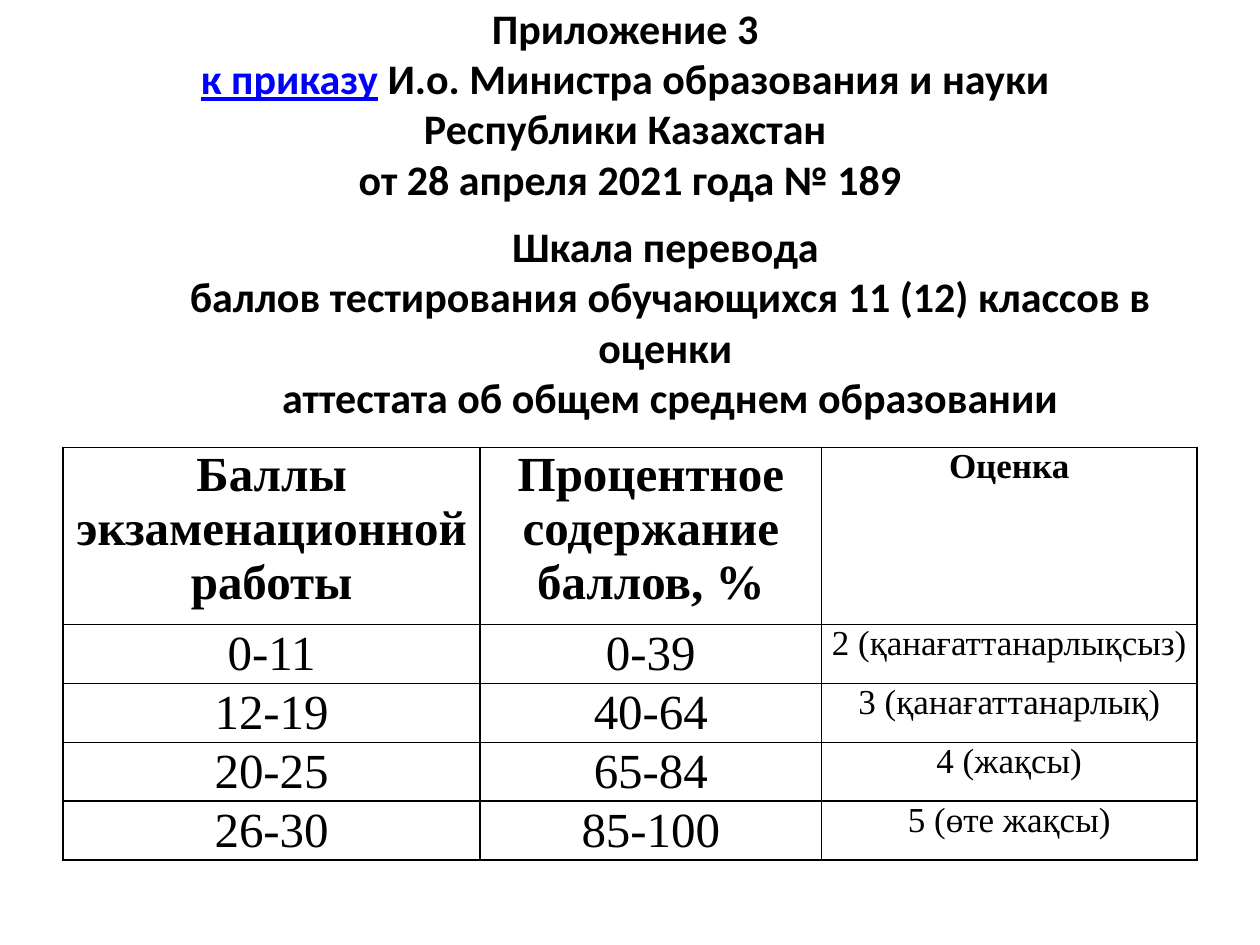
from dataclasses import dataclass

from lxml import etree
from pptx import Presentation
from pptx.dml.color import RGBColor
from pptx.enum.text import MSO_ANCHOR, PP_ALIGN
from pptx.oxml.ns import qn
from pptx.util import Cm, Pt

CENTER = PP_ALIGN.CENTER
TOP, MIDDLE = MSO_ANCHOR.TOP, MSO_ANCHOR.MIDDLE


@dataclass(frozen=True)
class Theme:
    ink: str = "000000"
    link: str = "0000FF"
    paper: str = "FFFFFF"
    head_font: str = "Calibri"
    table_font: str = "Times New Roman"
    head_size: int = 24
    score_size: int = 28
    grade_size: int = 20
    border: int = 1


THEME = Theme()

HEADERS = [
    ["Баллы экзаменационной ", "работы"],
    ["Процентное содержание баллов, %"],
    ["Оценка"],
]
GRADES = [
    ("0-11", "0-39", "2 (қанағаттанарлықсыз)"),
    ("12-19", "40-64", "3 (қанағаттанарлық)"),
    ("20-25", "65-84", "4 (жақсы)"),
    ("26-30", "85-100", "5 (өте жақсы)"),
]
COL_WIDTHS = [Cm(8.41), Cm(6.88), Cm(7.57)]
HEADER_HEIGHT, ROW_HEIGHT = Cm(3.57), Cm(1.18)


def add_run(p, text, font=THEME.head_font, size=THEME.head_size,
            color=THEME.ink, bold=True, underline=False):
    """Add text to a paragraph; each newline becomes a line break."""
    for i, line in enumerate(text.split("\n")):
        if i:
            p.add_line_break()
        if line:
            r = p.add_run()
            r.text = line
            r.font.name = font
            r.font.size = Pt(size)
            r.font.bold = bold
            r.font.underline = underline
            r.font.color.rgb = RGBColor.from_string(color)


def add_paragraphs(tf, lines, **fmt):
    for i, line in enumerate(lines):
        p = tf.add_paragraph() if i else tf.paragraphs[0]
        p.alignment = CENTER
        add_run(p, line, **fmt)


def add_textbox(s, left, top, width, height, anchor=TOP):
    tf = s.shapes.add_textbox(left, top, width, height).text_frame
    tf.word_wrap = True
    tf.vertical_anchor = anchor
    return tf


def set_borders(cell):
    tcPr = cell._tc.get_or_add_tcPr()
    for i, side in enumerate(("a:lnL", "a:lnR", "a:lnT", "a:lnB")):
        ln = etree.Element(qn(side), w=str(Pt(THEME.border)))
        fill = etree.SubElement(ln, qn("a:solidFill"))
        etree.SubElement(fill, qn("a:srgbClr"), val=THEME.ink)
        tcPr.insert(i, ln)


def fill_cell(cell, lines, size, bold=False, anchor=TOP):
    cell.margin_left = cell.margin_right = Cm(0.18)
    cell.margin_top = cell.margin_bottom = 0
    cell.vertical_anchor = anchor
    cell.fill.solid()
    cell.fill.fore_color.rgb = RGBColor.from_string(THEME.paper)
    set_borders(cell)
    add_paragraphs(cell.text_frame, lines, font=THEME.table_font,
                   size=size, bold=bold)


def add_grade_table(s, left, top):
    rows = len(GRADES) + 1
    height = HEADER_HEIGHT + ROW_HEIGHT * len(GRADES)
    table = s.shapes.add_table(rows, len(HEADERS), left, top,
                               sum(COL_WIDTHS), height).table
    for col, width in zip(table.columns, COL_WIDTHS):
        col.width = width
    for i, row in enumerate(table.rows):
        row.height = ROW_HEIGHT if i else HEADER_HEIGHT

    sizes = [THEME.score_size, THEME.score_size, THEME.grade_size]
    anchors = [MIDDLE, MIDDLE, TOP]
    for j, (size, anchor) in enumerate(zip(sizes, anchors)):
        fill_cell(table.cell(0, j), HEADERS[j], size, bold=True)
        for i, grade in enumerate(GRADES, start=1):
            fill_cell(table.cell(i, j), [grade[j]], size, anchor=anchor)


def main():
    prs = Presentation()
    prs.slide_width, prs.slide_height = Cm(25.4), Cm(19.05)
    s = prs.slides.add_slide(prs.slide_layouts[6])

    # Reference to the order
    tf = add_textbox(s, Cm(1.27), Cm(0.94), Cm(22.86), Cm(3.18), MIDDLE)
    tf.margin_bottom = Cm(1.04)
    p = tf.paragraphs[0]
    p.alignment = CENTER
    add_run(p, "Приложение 3 \n")
    add_run(p, "к приказу", color=THEME.link, underline=True)
    add_run(p, " И.о. Министра образования и науки \n"
               "Республики Казахстан \nот 28 апреля 2021 года № 189")

    # Heading of the scale
    tf = add_textbox(s, Cm(2.31), Cm(4.32), Cm(22.4), Cm(5.13))
    add_paragraphs(tf, [
        "Шкала перевода ",
        "баллов тестирования обучающихся 11 (12) классов в оценки ",
        "аттестата об общем среднем образовании",
    ])

    # Conversion table
    add_grade_table(s, Cm(1.27), Cm(9.02))

    prs.save("out.pptx")


if __name__ == "__main__":
    main()
